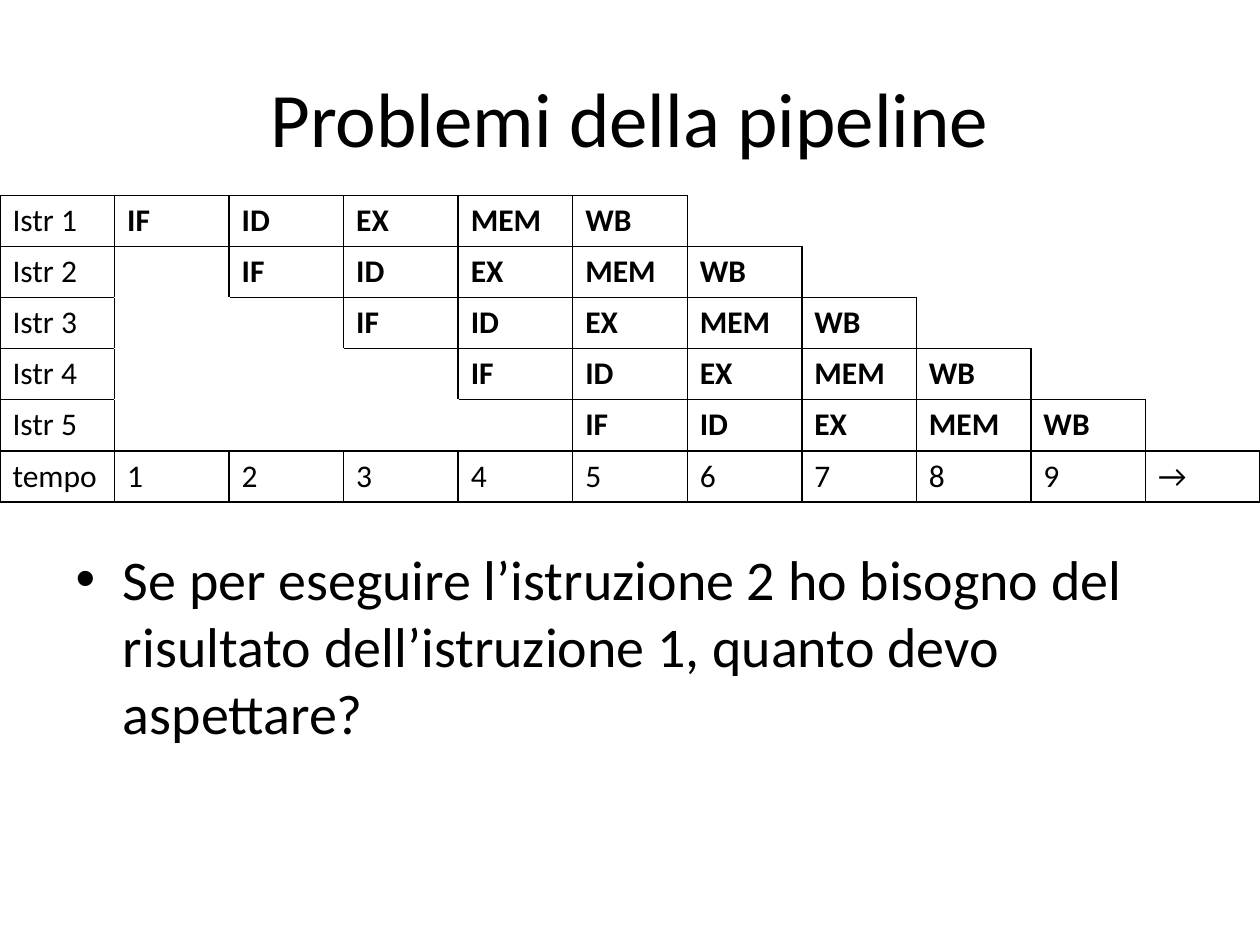
from pptx import Presentation
from pptx.util import Inches, Pt
from pptx.dml.color import RGBColor as RGB
from pptx.enum.text import PP_ALIGN as Align, MSO_ANCHOR as Anchor, MSO_AUTO_SIZE as Auto
from pptx.oxml.ns import qn
from lxml.etree import SubElement as Sub

TITLE = "Problemi della pipeline"
BODY = ("Se per eseguire l’istruzione 2 ho bisogno del risultato "
        "dell’istruzione 1, quanto devo aspettare?")
STAGES = ["IF", "ID", "EX", "MEM", "WB"]
JOBS = ["Istr 1", "Istr 2", "Istr 3", "Istr 4", "Istr 5"]
TIMES = ["tempo", "1", "2", "3", "4", "5", "6", "7", "8", "9", "→"]
BLACK, WHITE = "000000", "FFFFFF"
SIDES = {"lnL": (0, -1), "lnR": (0, 1), "lnT": (-1, 0), "lnB": (1, 0)}

COLS = len(TIMES)
GRID = [[job] + [""] * i + STAGES + [""] * (COLS - 1 - i - len(STAGES))
        for i, job in enumerate(JOBS)] + [TIMES]
ROWS = len(GRID)


def color(code):
    return RGB.from_string(code)


def write(frame, text, size=18, bold=False, align=None):
    para = frame.paragraphs[0]
    para.alignment = align
    run = para.add_run()
    run.text = text
    font = run.font
    font.name, font.size, font.bold = "Calibri", Pt(size), bold
    font.color.rgb = color(BLACK)


def place(shape, left, top, width, height):
    shape.left, shape.top = Inches(left), Inches(top)
    shape.width, shape.height = Inches(width), Inches(height)
    shape.text_frame.auto_size = Auto.NONE


def filled(row, col):
    return 0 <= row < ROWS and 0 <= col < COLS and GRID[row][col] != ""


def border(cell, row, col):
    props = cell._tc.get_or_add_tcPr()
    for side, (down, right) in SIDES.items():
        dark = filled(row, col) or filled(row + down, col + right)
        line = Sub(props, qn("a:" + side), w=str(Pt(1)))
        fill = Sub(line, qn("a:solidFill"))
        Sub(fill, qn("a:srgbClr"), val=BLACK if dark else WHITE)


def main():
    deck = Presentation()
    deck.slide_width, deck.slide_height = Inches(10), Inches(7.5)
    slide = deck.slides.add_slide(deck.slide_layouts[1])

    title, body = slide.placeholders
    place(title, 0.5, 0.3, 9, 1.25)
    title.text_frame.vertical_anchor = Anchor.MIDDLE
    write(title.text_frame, TITLE, size=44, align=Align.CENTER)
    place(body, 0.5, 4.27, 9, 4.04)
    write(body.text_frame, BODY, size=32)

    table = slide.shapes.add_table(
        ROWS, COLS, 0, Inches(1.55), Inches(10), Inches(2.43)).table
    table.first_row = table.horz_banding = False
    for row, words in enumerate(GRID):
        for col, word in enumerate(words):
            cell = table.cell(row, col)
            border(cell, row, col)
            cell.fill.solid()
            cell.fill.fore_color.rgb = color(WHITE)
            if word:
                write(cell.text_frame, word, bold=word in STAGES)

    deck.save("out.pptx")


if __name__ == "__main__":
    main()
